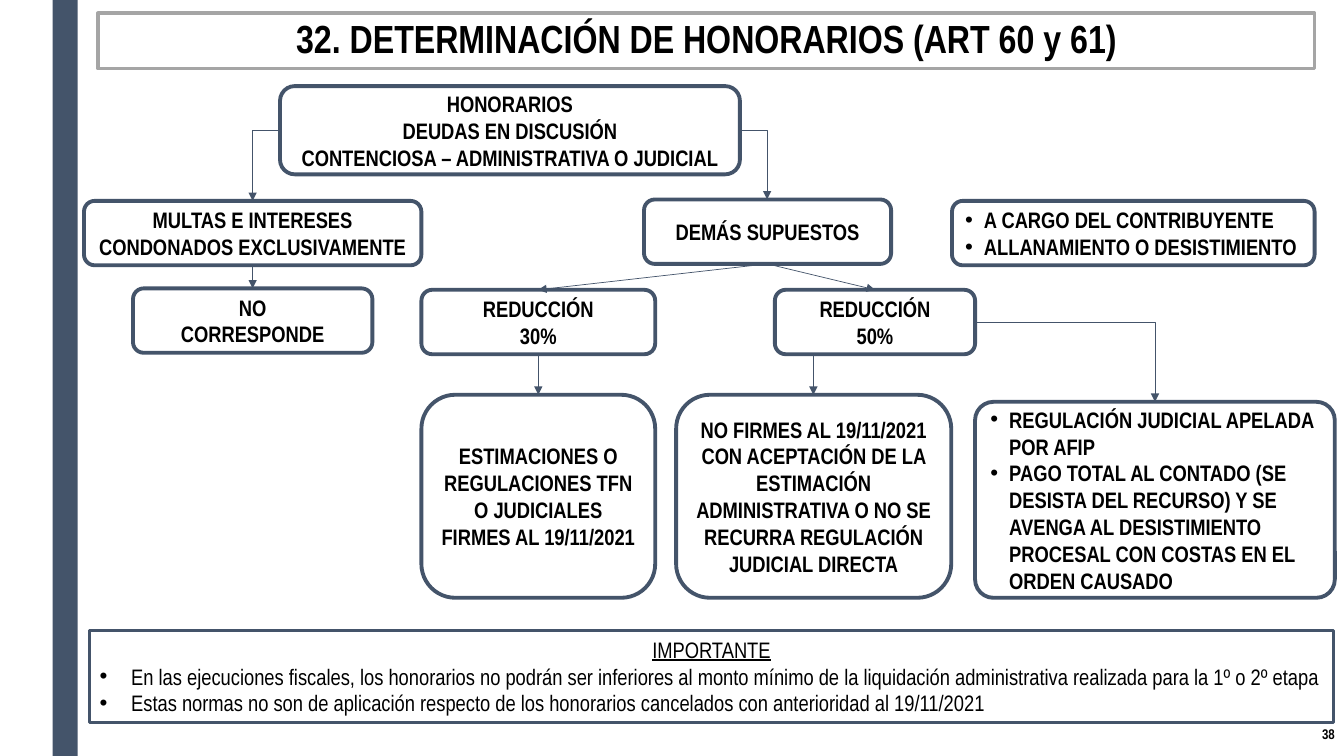
from pptx import Presentation
from pptx.dml.color import RGBColor
from pptx.enum.shapes import MSO_CONNECTOR, MSO_SHAPE
from pptx.enum.text import MSO_ANCHOR, MSO_AUTO_SIZE, PP_ALIGN
from pptx.oxml.ns import qn
from pptx.util import Pt
from lxml.etree import SubElement

COLORS = {"navy": "44546A", "gray": "A5A5A5", "white": "FFFFFF", "black": "000000"}
COLORS = {name: RGBColor.from_string(value) for name, value in COLORS.items()}


def write(tf, lines, size=16, bold=True, align=PP_ALIGN.CENTER, anchor=MSO_ANCHOR.MIDDLE):
    """Fill a text frame with one paragraph per line."""
    tf.word_wrap = True
    tf.auto_size = MSO_AUTO_SIZE.NONE
    tf.vertical_anchor = anchor
    for i, line in enumerate(lines):
        p = tf.paragraphs[0] if i == 0 else tf.add_paragraph()
        p.alignment = align
        p.space_before = Pt(0)
        r = p.add_run()
        r.text = line
        r.font.name = "Arial Narrow"
        r.font.size = Pt(size)
        r.font.bold = bold
        r.font.color.rgb = COLORS["black"]


def set_bullet(p, indent):
    """Give a paragraph a hanging bullet, or none when indent is 0."""
    pPr = p._p.get_or_add_pPr()
    pPr.set("marL", str(Pt(indent)))
    pPr.set("indent", str(-Pt(indent)))
    if indent:
        SubElement(pPr, qn("a:buFont"), typeface="Arial")
        SubElement(pPr, qn("a:buChar"), char="•")
    else:
        SubElement(pPr, qn("a:buNone"))


prs = Presentation()
prs.slide_width, prs.slide_height = Pt(960), Pt(540)
s = prs.slides.add_slide(prs.slide_layouts[1])

# Side bar
bar = s.shapes.add_shape(MSO_SHAPE.RECTANGLE, Pt(37.5), Pt(0), Pt(18), Pt(540))
bar.shadow.inherit = False
bar.fill.solid()
bar.fill.fore_color.rgb = COLORS["navy"]
bar.line.fill.background()

# Title
title = s.shapes.title
title.left, title.top, title.width, title.height = Pt(70), Pt(9.5), Pt(869), Pt(39.5)
title.fill.solid()
title.fill.fore_color.rgb = COLORS["white"]
title.line.color.rgb = COLORS["gray"]
title.line.width = Pt(2.75)
write(title.text_frame, ["32. DETERMINACIÓN DE HONORARIOS (ART 60 y 61)"], size=28)
title.text_frame.paragraphs[0].line_spacing = 0.9

# Decision tree: left, top, width, height, corner, bulleted, lines
ROUND = 0.1667
boxes = [
    (200, 61.5, 328.5, 63, ROUND, False,
     ["HONORARIOS", "DEUDAS EN DISCUSIÓN", "CONTENCIOSA – ADMINISTRATIVA O JUDICIAL"]),
    (60, 143.5, 241, 46, ROUND, False, ["MULTAS E INTERESES", "CONDONADOS EXCLUSIVAMENTE"]),
    (460, 142.5, 176.5, 46, ROUND, False, ["DEMÁS SUPUESTOS"]),
    (680, 143.5, 259, 46, ROUND, True,
     ["A CARGO DEL CONTRIBUYENTE", "ALLANAMIENTO O DESISTIMIENTO"]),
    (95, 206, 171, 46, ROUND, False, ["NO", "CORRESPONDE"]),
    (301, 207, 167, 46, ROUND, False, ["REDUCCIÓN", "30%"]),
    (553.5, 207, 143, 46, ROUND, False, ["REDUCCIÓN", "50%"]),
    (301, 282, 167, 145, ROUND, False,
     ["ESTIMACIONES O REGULACIONES TFN O JUDICIALES FIRMES AL 19/11/2021"]),
    (483, 282, 196.5, 145, ROUND, False,
     ["NO FIRMES AL 19/11/2021 CON ACEPTACIÓN DE LA ESTIMACIÓN ADMINISTRATIVA "
      "O NO SE RECURRA REGULACIÓN JUDICIAL DIRECTA"]),
    (696.5, 287, 257, 140, 0.094, True,
     ["REGULACIÓN JUDICIAL APELADA POR AFIP",
      "PAGO TOTAL AL CONTADO (SE DESISTA DEL RECURSO) Y SE AVENGA AL DESISTIMIENTO "
      "PROCESAL CON COSTAS EN EL ORDEN CAUSADO"]),
]
for left, top, width, height, corner, bulleted, lines in boxes:
    sp = s.shapes.add_shape(MSO_SHAPE.ROUNDED_RECTANGLE, Pt(left), Pt(top), Pt(width), Pt(height))
    sp.adjustments[0] = corner
    sp.shadow.inherit = False
    sp.fill.solid()
    sp.fill.fore_color.rgb = COLORS["white"]
    sp.line.color.rgb = COLORS["navy"]
    sp.line.width = Pt(2.75)
    write(sp.text_frame, lines, align=PP_ALIGN.LEFT if bulleted else PP_ALIGN.CENTER)
    if bulleted:
        for p in sp.text_frame.paragraphs:
            set_bullet(p, 13.5)

# Arrows: start x, start y, end x, end y, bent
arrows = [
    (200, 93, 180.5, 143.5, True),
    (528.5, 93, 548, 142.5, True),
    (696.5, 230, 825, 287, True),
    (180.5, 189.5, 180.5, 206, False),
    (548, 188.5, 384.5, 207, False),
    (548, 188.5, 625, 207, False),
    (384.5, 253, 384.5, 282, False),
    (581, 253, 581, 282, False),
]
for x1, y1, x2, y2, bent in arrows:
    kind = MSO_CONNECTOR.ELBOW if bent else MSO_CONNECTOR.STRAIGHT
    arrow = s.shapes.add_connector(kind, Pt(x1), Pt(y1), Pt(x2), Pt(y2))
    arrow.line.color.rgb = COLORS["navy"]
    arrow.line.width = Pt(0.5)
    spPr = arrow._element.spPr
    if bent:
        spPr.find(qn("a:prstGeom")).set("prst", "bentConnector2")
    SubElement(spPr.find(qn("a:ln")), qn("a:tailEnd"), type="triangle")
    SubElement(spPr, qn("a:effectLst"))

# Important notes
notes = s.placeholders[1]
notes.left, notes.top, notes.width, notes.height = Pt(64), Pt(450.5), Pt(888.5), Pt(65.5)
notes.line.color.rgb = COLORS["navy"]
notes.line.width = Pt(2.5)
write(notes.text_frame, [
    "IMPORTANTE",
    "En las ejecuciones fiscales, los honorarios no podrán ser inferiores al monto mínimo "
    "de la liquidación administrativa realizada para la 1º o 2º etapa",
    "Estas normas no son de aplicación respecto de los honorarios cancelados con "
    "anterioridad al 19/11/2021",
], bold=False, align=PP_ALIGN.LEFT, anchor=MSO_ANCHOR.TOP)
heading, *items = notes.text_frame.paragraphs
heading.alignment = PP_ALIGN.CENTER
heading.runs[0].font.underline = True
set_bullet(heading, 0)
for p in items:
    set_bullet(p, 22.5)

# Slide number
number = s.shapes.add_textbox(Pt(834.5), Pt(508.5), Pt(126), Pt(31.5))
write(number.text_frame, ["38"], size=10, align=PP_ALIGN.RIGHT)

prs.save("out.pptx")
